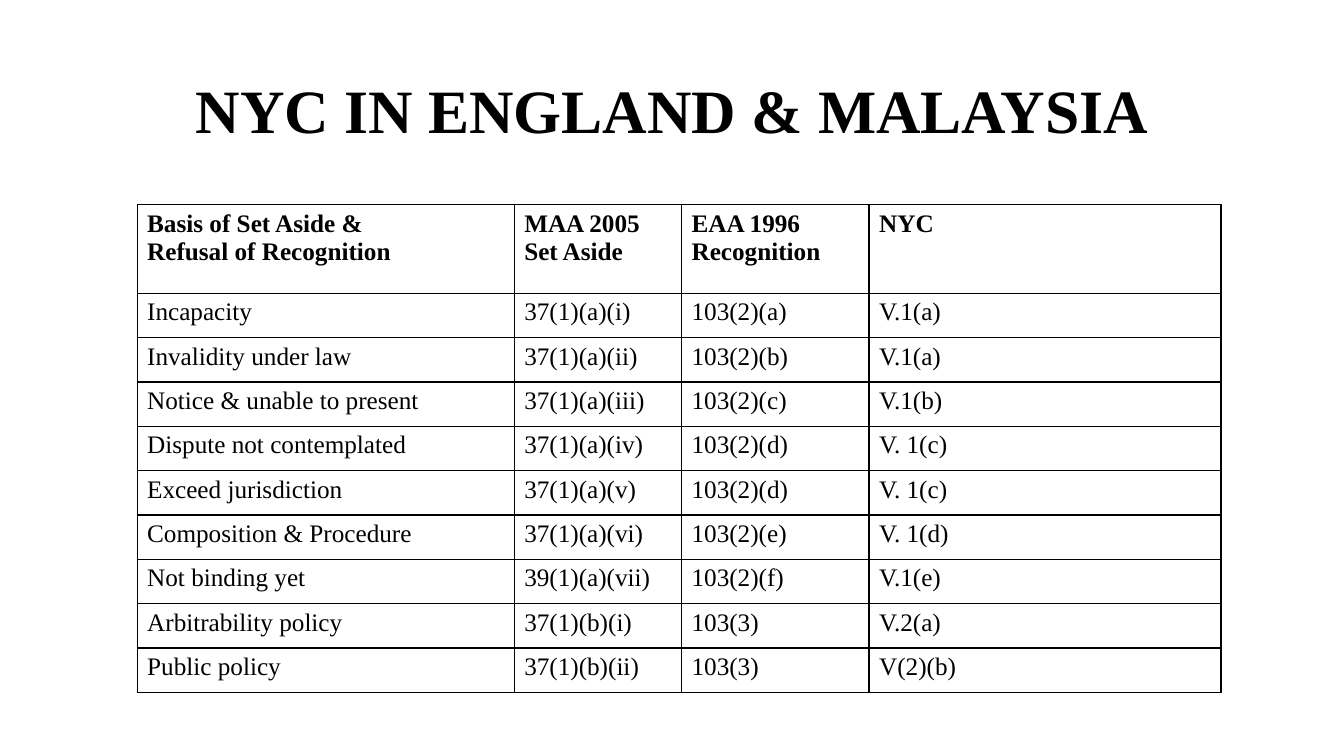
from lxml.etree import SubElement
from pptx import Presentation
from pptx.dml.color import RGBColor
from pptx.enum.text import MSO_ANCHOR, PP_ALIGN
from pptx.oxml.ns import qn
from pptx.util import Inches, Pt

BLACK = RGBColor(0, 0, 0)
WHITE = RGBColor(255, 255, 255)
FONT = "Times New Roman"
COL_WIDTHS = [3.74, 1.66, 1.86, 3.49]
HEADER_HEIGHT = 0.88
ROW_HEIGHT = 0.44
ROWS = [
    ["Basis of Set Aside &\nRefusal of Recognition", "MAA 2005\nSet Aside",
     "EAA 1996 Recognition", "NYC"],
    ["Incapacity", "37(1)(a)(i)", "103(2)(a)", "V.1(a)"],
    ["Invalidity under law", "37(1)(a)(ii)", "103(2)(b)", "V.1(a)"],
    ["Notice & unable to present", "37(1)(a)(iii)", "103(2)(c)", "V.1(b)"],
    ["Dispute not contemplated", "37(1)(a)(iv)", "103(2)(d)", "V. 1(c)"],
    ["Exceed jurisdiction", "37(1)(a)(v)", "103(2)(d)", "V. 1(c)"],
    ["Composition & Procedure", "37(1)(a)(vi)", "103(2)(e)", "V. 1(d)"],
    ["Not binding yet", "39(1)(a)(vii)", "103(2)(f)", "V.1(e)"],
    ["Arbitrability policy", "37(1)(b)(i)", "103(3)", "V.2(a)"],
    ["Public policy", "37(1)(b)(ii)", "103(3)", "V(2)(b)"],
]


def set_font(p, size, bold):
    p.font.name = FONT
    p.font.size = Pt(size)
    p.font.bold = bold
    p.font.color.rgb = BLACK


def add_title(s, text):
    tf = s.shapes.add_textbox(Inches(0.92), Inches(0.4), Inches(11.5), Inches(1.45)).text_frame
    tf.word_wrap = True
    tf.vertical_anchor = MSO_ANCHOR.MIDDLE
    p = tf.paragraphs[0]
    p.text = text
    p.alignment = PP_ALIGN.CENTER
    p.line_spacing = 0.9
    set_font(p, 44, True)


def set_borders(cell):
    tcPr = cell._tc.get_or_add_tcPr()
    for side in ("a:lnL", "a:lnR", "a:lnT", "a:lnB"):
        ln = SubElement(tcPr, qn(side), w=str(Pt(1)))
        fill = SubElement(ln, qn("a:solidFill"))
        SubElement(fill, qn("a:srgbClr"), val=str(BLACK))


def fill_cell(cell, text, bold):
    cell.text = text
    for p in cell.text_frame.paragraphs:
        set_font(p, 18, bold)
    set_borders(cell)
    cell.fill.solid()
    cell.fill.fore_color.rgb = WHITE


def add_comparison_table(s):
    heights = [HEADER_HEIGHT] + [ROW_HEIGHT] * (len(ROWS) - 1)
    table = s.shapes.add_table(len(ROWS), len(COL_WIDTHS), Inches(1.36), Inches(2.03),
                               Inches(sum(COL_WIDTHS)), Inches(sum(heights))).table
    table.first_row = False
    table.horz_banding = False
    for column, width in zip(table.columns, COL_WIDTHS):
        column.width = Inches(width)
    for i, (row, height) in enumerate(zip(table.rows, heights)):
        row.height = Inches(height)
        for cell, text in zip(row.cells, ROWS[i]):
            fill_cell(cell, text, i == 0)


def main():
    prs = Presentation()
    prs.slide_width = Inches(13.33)
    prs.slide_height = Inches(7.5)
    s = prs.slides.add_slide(prs.slide_layouts[6])
    add_title(s, "NYC IN ENGLAND & MALAYSIA")
    add_comparison_table(s)
    prs.save("out.pptx")


if __name__ == "__main__":
    main()
